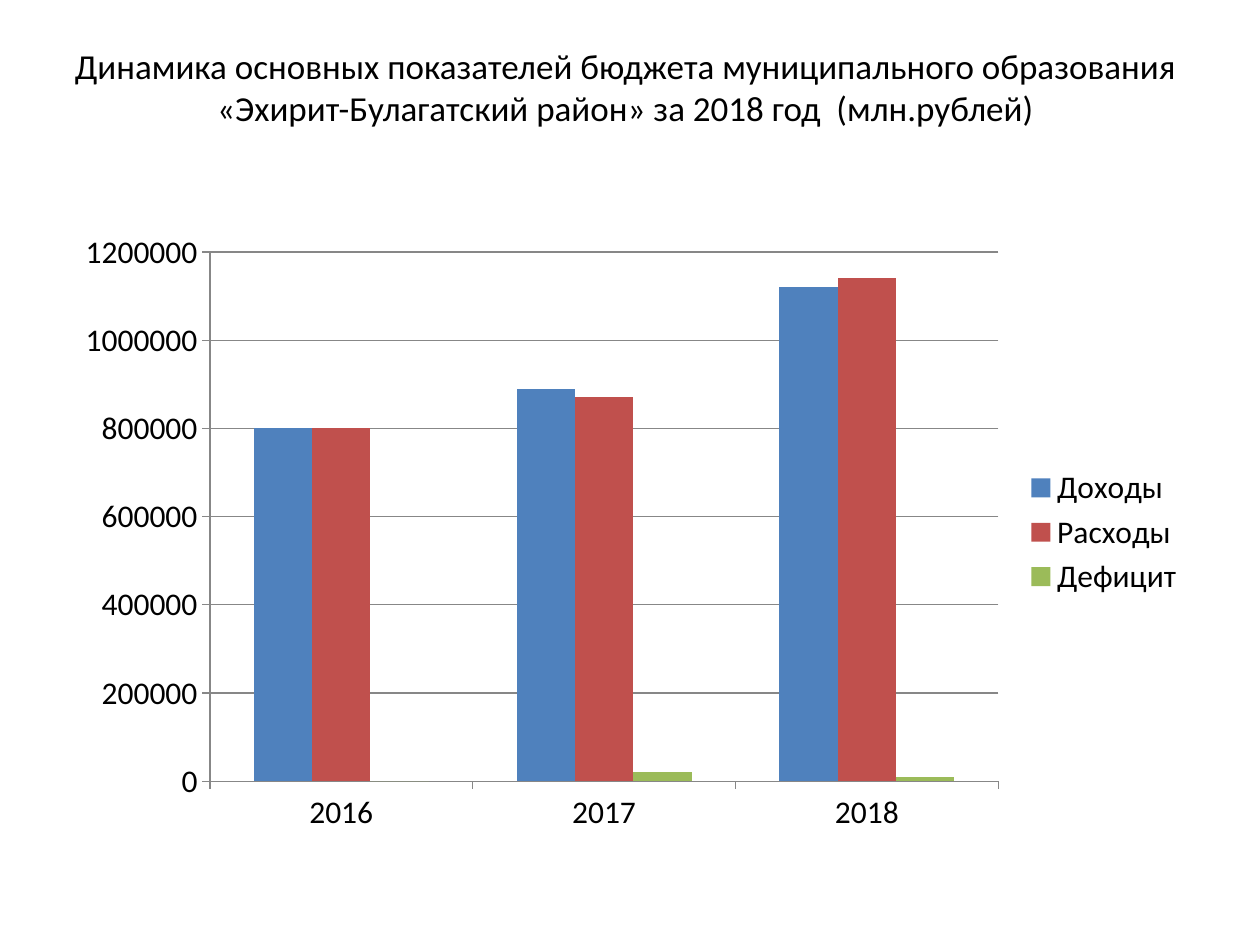
from dataclasses import dataclass

from pptx import Presentation
from pptx.chart.data import CategoryChartData
from pptx.dml.color import RGBColor
from pptx.enum.chart import XL_CHART_TYPE, XL_LEGEND_POSITION, XL_TICK_MARK
from pptx.enum.text import MSO_ANCHOR, PP_ALIGN
from pptx.util import Pt


@dataclass(frozen=True)
class Theme:
    face: str = "Calibri"
    ink: str = "000000"
    rule: str = "878787"
    bars: tuple = ("4F81BD", "C0504D", "9BBB59")
    head: int = 20
    body: int = 18


THEME = Theme()
TITLE = ("Динамика основных показателей бюджета муниципального образования "
         "«Эхирит-Булагатский район» за 2018 год  (млн.рублей)")
YEARS = ("2016", "2017", "2018")
BUDGET = {
    "Доходы": (800000, 890000, 1120000),
    "Расходы": (800000, 870000, 1140000),
    "Дефицит": (0, 20000, 10000),
}


def set_font(font, size):
    font.name = THEME.face
    font.size = Pt(size)
    font.bold = False
    font.color.rgb = RGBColor.from_string(THEME.ink)


def set_line(line):
    line.color.rgb = RGBColor.from_string(THEME.rule)
    line.width = Pt(0.75)


def add_title(slide, text, left, top, width, height):
    box = slide.shapes.add_textbox(Pt(left), Pt(top), Pt(width), Pt(height))
    frame = box.text_frame
    frame.word_wrap = True
    frame.vertical_anchor = MSO_ANCHOR.MIDDLE
    para = frame.paragraphs[0]
    para.alignment = PP_ALIGN.CENTER
    run = para.add_run()
    run.text = text
    set_font(run.font, THEME.head)


def style_axis(axis):
    axis.major_tick_mark = XL_TICK_MARK.OUTSIDE
    axis.minor_tick_mark = XL_TICK_MARK.NONE
    set_line(axis.format.line)


def add_chart(slide, left, top, width, height):
    data = CategoryChartData(number_format="General")
    data.categories = YEARS
    for name, vals in BUDGET.items():
        data.add_series(name, vals)
    chart = slide.shapes.add_chart(
        XL_CHART_TYPE.COLUMN_CLUSTERED,
        Pt(left), Pt(top), Pt(width), Pt(height), data).chart
    chart.has_title = False
    set_font(chart.font, THEME.body)

    chart.has_legend = True
    chart.legend.position = XL_LEGEND_POSITION.RIGHT
    chart.legend.include_in_layout = False

    plot = chart.plots[0]
    plot.gap_width = 150
    plot.overlap = 0
    plot.vary_by_categories = False
    for bar, color in zip(plot.series, THEME.bars):
        bar.format.fill.solid()
        bar.format.fill.fore_color.rgb = RGBColor.from_string(color)

    style_axis(chart.category_axis)
    scale = chart.value_axis
    style_axis(scale)
    scale.minimum_scale = 0
    scale.maximum_scale = 1200000
    scale.major_unit = 200000
    scale.has_major_gridlines = True
    set_line(scale.major_gridlines.format.line)


def main():
    deck = Presentation()
    deck.slide_width, deck.slide_height = Pt(720), Pt(540)
    slide = deck.slides.add_slide(deck.slide_layouts[6])
    add_title(slide, TITLE, 31, 21.6, 653, 55.4)
    add_chart(slide, 36, 126, 648, 356.4)
    deck.save("out.pptx")


if __name__ == "__main__":
    main()
